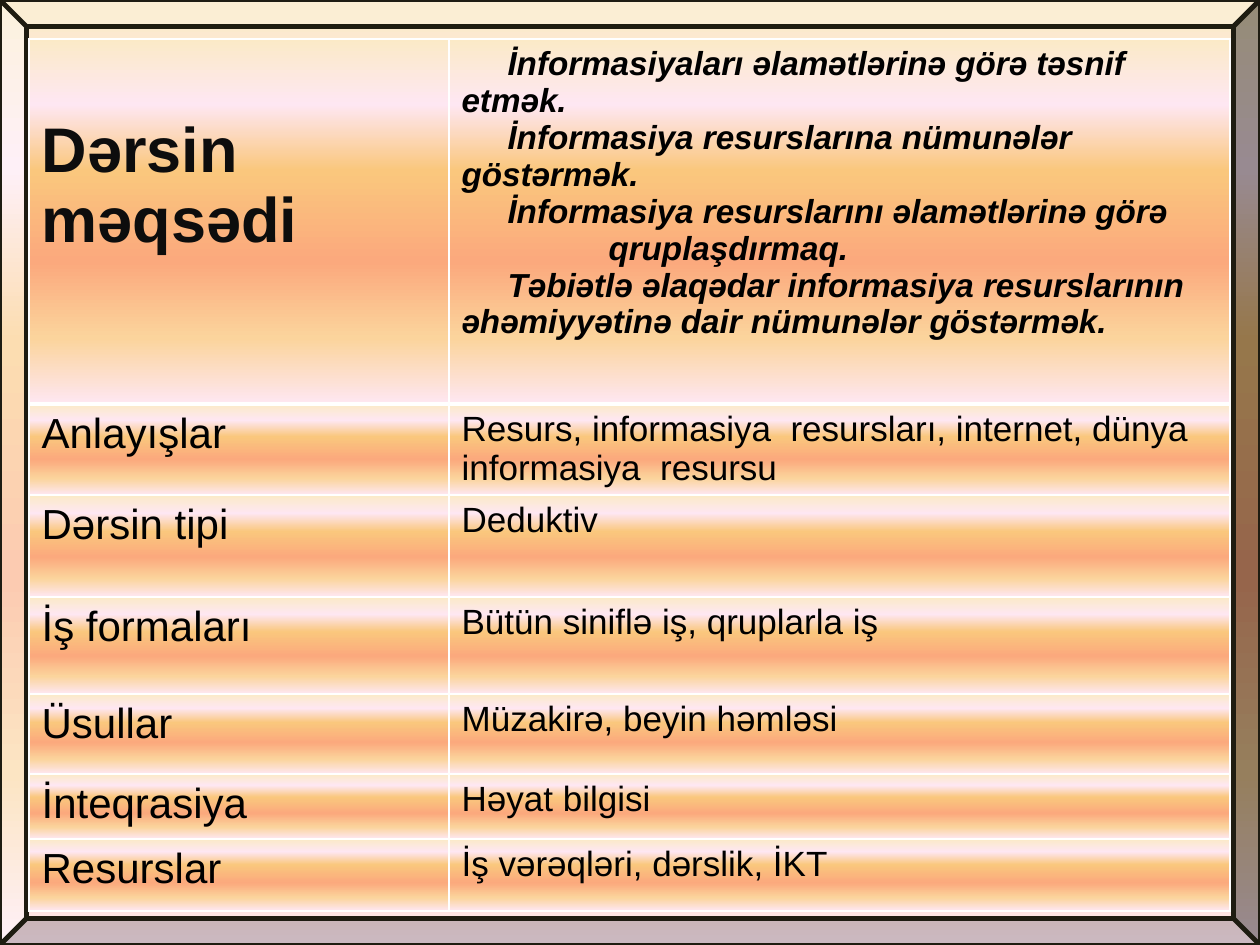
"""Build the lesson plan slide: a bevelled frame around a two-column table."""
from lxml import etree
from pptx import Presentation
from pptx import util as u
from pptx.dml.color import RGBColor
from pptx.enum import shapes
from pptx.oxml import parse_xml
from pptx.oxml.ns import nsdecls, qn

PX = 914400 // 126
STOPS = [(0, "FBEAC7"), (18, "FEE7F2"), (36, "FAC77D"),
         (61, "FBA97D"), (82, "FBD49C"), (100, "FEE7F2")]
COLS = [420, 781]
ROWS = [365, 91, 102, 97, 80, 65, 72]
GOALS = [
    ("İnformasiyaları əlamətlərinə görə təsnif etmək.", 46),
    ("İnformasiya resurslarına nümunələr göstərmək.", 46),
    ("İnformasiya resurslarını əlamətlərinə görə", 46),
    ("qruplaşdırmaq.", 147),
    ("Təbiətlə əlaqədar informasiya resurslarının əhəmiyyətinə dair "
     "nümunələr göstərmək.", 46),
]
PLAN = [
    ("Anlayışlar", "Resurs, informasiya  resursları, internet, dünya "
                   "informasiya  resursu"),
    ("Dərsin tipi", "Deduktiv"),
    ("İş formaları", "Bütün siniflə iş, qruplarla iş"),
    ("Üsullar", "Müzakirə, beyin həmləsi"),
    ("İnteqrasiya", "Həyat bilgisi"),
    ("Resurslar", "İş vərəqləri, dərslik, İKT"),
]


def px(n):
    """Turn whole pixels into EMU."""
    return u.Emu(n * PX)


def color(code):
    """Turn a hex string into a colour."""
    return RGBColor.from_string(code)


def shade(fill, root):
    """Give the fill held under root the vertical gradient."""
    fill.solid()
    stops = "".join(f'<a:gs pos="{at * 1000}"><a:srgbClr val="{code}"/></a:gs>'
                    for at, code in STOPS)
    grad = parse_xml(f'<a:gradFill {nsdecls("a")} rotWithShape="1">'
                     f'<a:gsLst>{stops}</a:gsLst>'
                     '<a:lin ang="5400000" scaled="0"/></a:gradFill>')
    old = next(root.iter(qn("a:solidFill")))
    old.getparent().replace(old, grad)


def edge(cell, base):
    """Draw white cell borders, with a bottom line of base points."""
    props = cell._tc.get_or_add_tcPr()
    sides = [("lnL", 1), ("lnR", 1), ("lnT", 1), ("lnB", base)]
    for spot, (tag, size) in enumerate(sides):
        line = etree.Element(qn(f"a:{tag}"), w=str(u.Pt(size)))
        fill = etree.SubElement(line, qn("a:solidFill"))
        etree.SubElement(fill, qn("a:srgbClr"), val="FFFFFF")
        props.insert(spot, line)


def write(cell, lines, size, bold=False, slant=False, code="000000"):
    """Fill a cell with (text, first-line indent) pairs in one font."""
    frame = cell.text_frame
    for i, (text, dent) in enumerate(lines):
        para = frame.add_paragraph() if i else frame.paragraphs[0]
        para.text = text
        font = para.font
        font.name, font.size = "Arial", u.Pt(size)
        font.bold, font.italic = bold, slant
        font.color.rgb = color(code)
        props = para._p.get_or_add_pPr()
        props.set("marL", "0")
        props.set("indent", str(px(dent)))


def add_frame(slide):
    """Add the bevel that spans the slide."""
    shape = slide.shapes.add_shape(shapes.MSO_SHAPE.BEVEL, 0, 0,
                                   px(1260), px(945))
    shape.adjustments[0] = 0.028
    shape.shadow.inherit = False
    shade(shape.fill, shape._element.spPr)
    shape.line.color.rgb = color("1E1C11")
    shape.line.width = u.Pt(2.75)


def add_plan(slide):
    """Add the table of lesson goals and plan items."""
    table = slide.shapes.add_table(len(ROWS), len(COLS), px(29), px(39),
                                   px(sum(COLS)), px(sum(ROWS))).table
    for col, wide in zip(table.columns, COLS):
        col.width = px(wide)
    for i, (row, high) in enumerate(zip(table.rows, ROWS)):
        row.height = px(high)
        for cell in row.cells:
            shade(cell.fill, cell._tc.get_or_add_tcPr())
            edge(cell, 1 if i else 3)
    head = table.cell(0, 0)
    head.margin_top = px(76)
    write(head, [("Dərsin məqsədi", 0)], 36, bold=True, code="0D0D0D")
    write(table.cell(0, 1), GOALS, 19, bold=True, slant=True)
    for i, (name, text) in enumerate(PLAN, 1):
        write(table.cell(i, 0), [(name, 0)], 24)
        write(table.cell(i, 1), [(text, 0)], 20)


def main():
    """Build and save the slide."""
    deck = Presentation()
    deck.slide_width, deck.slide_height = px(1260), px(945)
    slide = deck.slides.add_slide(deck.slide_layouts[6])
    shade(slide.background.fill, slide._element)
    add_frame(slide)
    add_plan(slide)
    deck.save("out.pptx")


if __name__ == "__main__":
    main()
